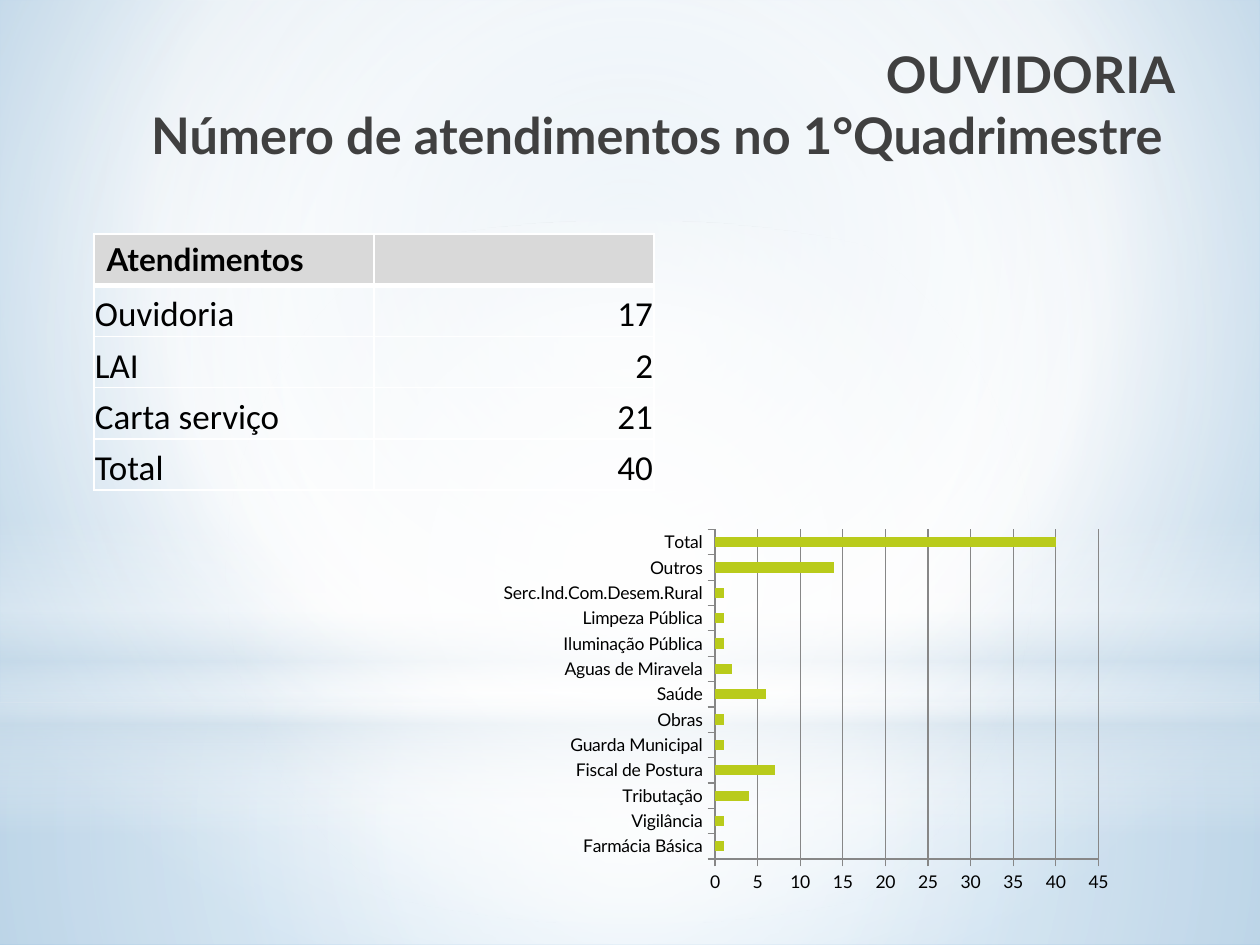
from lxml.etree import SubElement
from pptx import Presentation
from pptx.chart.data import CategoryChartData
from pptx.dml.color import RGBColor
from pptx.enum.chart import XL_CHART_TYPE, XL_TICK_MARK
from pptx.enum.shapes import MSO_SHAPE
from pptx.enum.text import MSO_ANCHOR, MSO_AUTO_SIZE, PP_ALIGN
from pptx.oxml.ns import qn
from pptx.util import Emu, Pt

WHITE = RGBColor(0xFF, 0xFF, 0xFF)
BLACK = RGBColor(0, 0, 0)
CHARCOAL = RGBColor(0x40, 0x40, 0x40)
HEADER_GREY = RGBColor(0xD9, 0xD9, 0xD9)
GRID_GREY = RGBColor(0x87, 0x87, 0x87)
LIME = RGBColor(0xB9, 0xCB, 0x1B)
MIST = RGBColor(0xCC, 0xDD, 0xEA)
SKY = RGBColor(0xBC, 0xD5, 0xE8)
DEEP_SKY = RGBColor(0x82, 0xB6, 0xDE)

TITLE_LINES = ["OUVIDORIA", "Número de atendimentos no 1°Quadrimestre ", ""]
TABLE_ROWS = [
    ("Atendimentos", ""),
    ("Ouvidoria", "17"),
    ("LAI", "2"),
    ("Carta serviço", "21"),
    ("Total", "40"),
]
SERVICES = [
    ("Farmácia Básica", 1),
    ("Vigilância", 1),
    ("Tributação", 4),
    ("Fiscal de Postura", 7),
    ("Guarda Municipal", 1),
    ("Obras", 1),
    ("Saúde", 6),
    ("Aguas de Miravela", 2),
    ("Iluminação Pública", 1),
    ("Limpeza Pública", 1),
    ("Serc.Ind.Com.Desem.Rural", 1),
    ("Outros", 14),
    ("Total", 40),
]
CENTRE = (50, 50, 50, 50)
SKY_STOPS = [(0, SKY, 100), (60, WHITE, 100), (100, DEEP_SKY, 100)]
BACKDROP = [
    (MSO_SHAPE.RECTANGLE, (0, 703, 1260, 242),
     [(0, WHITE, 91), (37, WHITE, 76), (100, MIST, 79)], CENTRE),
    (MSO_SHAPE.RECTANGLE, (0, 0, 1260, 703),
     [(0, WHITE, 89), (48, WHITE, 62), (100, MIST, 79)], CENTRE),
    (MSO_SHAPE.RECTANGLE, (0, 519, 1260, 315),
     [(0, WHITE, 0), (29, WHITE, 30), (45, MIST, 40),
      (55, WHITE, 26), (65, MIST, 60), (100, WHITE, 0)], None),
    (MSO_SHAPE.OVAL, (0, 221, 1260, 703),
     [(0, WHITE, 100), (56, WHITE, 0)], CENTRE),
]


def px(value):
    return Emu(round(value * 914400 / 126))


def place(*lengths):
    return [px(length) for length in lengths]


def add_gradient(fill, holder, stops, focus):
    fill.solid()
    solid = holder.find(qn("a:solidFill"))
    gradient = solid.makeelement(qn("a:gradFill"), {"rotWithShape": "1"})
    stop_list = SubElement(gradient, qn("a:gsLst"))
    for position, colour, opacity in stops:
        stop = SubElement(stop_list, qn("a:gs"), pos=str(position * 1000))
        shade = SubElement(stop, qn("a:srgbClr"), val=str(colour))
        if opacity < 100:
            SubElement(shade, qn("a:alpha"), val=str(opacity * 1000))
    if focus:
        radial = SubElement(gradient, qn("a:path"), path="circle")
        sides = {side: str(part * 1000) for side, part in zip("ltrb", focus)}
        SubElement(radial, qn("a:fillToRect"), sides)
    else:
        SubElement(gradient, qn("a:lin"), ang="5400000", scaled="0")
    holder.replace(solid, gradient)


def add_span(para, text, font, size, colour, bold):
    span = para.add_run()
    span.text = text
    span.font.name = font
    span.font.size = Pt(size)
    span.font.color.rgb = colour
    span.font.bold = bold


def set_borders(cell, bottom_width):
    properties = cell._tc.get_or_add_tcPr()
    for index, side in enumerate("LRTB"):
        width = Pt(bottom_width if side == "B" else 1)
        line = properties.makeelement(qn("a:ln" + side), {"w": str(width)})
        paint = SubElement(line, qn("a:solidFill"))
        SubElement(paint, qn("a:srgbClr"), val=str(WHITE))
        properties.insert(index, line)


def add_backdrop(page):
    background = page.background.fill
    holder = page.element.cSld.find(qn("p:bg")).find(qn("p:bgPr"))
    add_gradient(background, holder, SKY_STOPS, (20, 10, 20, 60))
    for kind, bounds, stops, focus in BACKDROP:
        shape = page.shapes.add_shape(kind, *place(*bounds))
        shape.shadow.inherit = False
        shape.line.fill.background()
        add_gradient(shape.fill, shape.element.spPr, stops, focus)


def add_title(page):
    title = page.shapes.title
    title.left, title.top, title.width, title.height = place(44, 37, 1144, 155)
    title.element.getparent().append(title.element)
    frame = title.text_frame
    frame.word_wrap = True
    frame.auto_size = MSO_AUTO_SIZE.NONE
    frame.vertical_anchor = MSO_ANCHOR.TOP
    para = frame.paragraphs[0]
    para.alignment = PP_ALIGN.RIGHT
    para.font.size = Pt(28.8)
    for index, line in enumerate(TITLE_LINES):
        if index:
            para.add_line_break()
        if line:
            add_span(para, line, "Lato", 28.8, CHARCOAL, True)


def add_counts(page):
    frame = page.shapes.add_table(len(TABLE_ROWS), 2, *place(94, 234, 560, 256))
    table = frame.table
    table.horz_banding = False
    for row, texts in enumerate(TABLE_ROWS):
        table.rows[row].height = px(51.2)
        for column, text in enumerate(texts):
            cell = table.cell(row, column)
            para = cell.text_frame.paragraphs[0]
            if row == 0:
                cell.fill.solid()
                cell.fill.fore_color.rgb = HEADER_GREY
                style = ("Lato", 18, BLACK, True)
            else:
                cell.fill.background()
                cell.vertical_anchor = MSO_ANCHOR.BOTTOM
                cell.margin_left = cell.margin_top = cell.margin_right = px(1)
                cell.margin_bottom = 0
                para.alignment = PP_ALIGN.RIGHT if column else PP_ALIGN.LEFT
                style = ("Calibri", 20, BLACK, False)
            if text:
                add_span(para, text, *style)
            set_borders(cell, 1 if row else 3)


def add_services(page):
    data = CategoryChartData()
    data.categories = [name for name, count in SERVICES]
    data.add_series("Series 1", [count for name, count in SERVICES])
    chart = page.shapes.add_chart(
        XL_CHART_TYPE.BAR_CLUSTERED, *place(491, 522, 630, 378), data).chart
    chart.has_legend = False
    chart.has_title = False
    chart.font.name = "Lato"
    chart.font.size = Pt(10)
    chart.font.color.rgb = BLACK
    for axis in (chart.category_axis, chart.value_axis):
        axis.major_tick_mark = XL_TICK_MARK.OUTSIDE
        axis.minor_tick_mark = XL_TICK_MARK.NONE
        axis.format.line.color.rgb = GRID_GREY
    chart.value_axis.minimum_scale = 0
    chart.value_axis.maximum_scale = 45
    chart.value_axis.major_unit = 5
    chart.value_axis.has_major_gridlines = True
    chart.value_axis.major_gridlines.format.line.color.rgb = GRID_GREY
    plot = chart.plots[0]
    plot.gap_width = 150
    plot.vary_by_categories = False
    bars = plot.series[0].format.fill
    bars.solid()
    bars.fore_color.rgb = LIME


def main():
    deck = Presentation()
    deck.slide_width, deck.slide_height = place(1260, 945)
    page = deck.slides.add_slide(deck.slide_layouts[5])
    add_backdrop(page)
    add_title(page)
    add_counts(page)
    add_services(page)
    deck.save("out.pptx")


if __name__ == "__main__":
    main()
